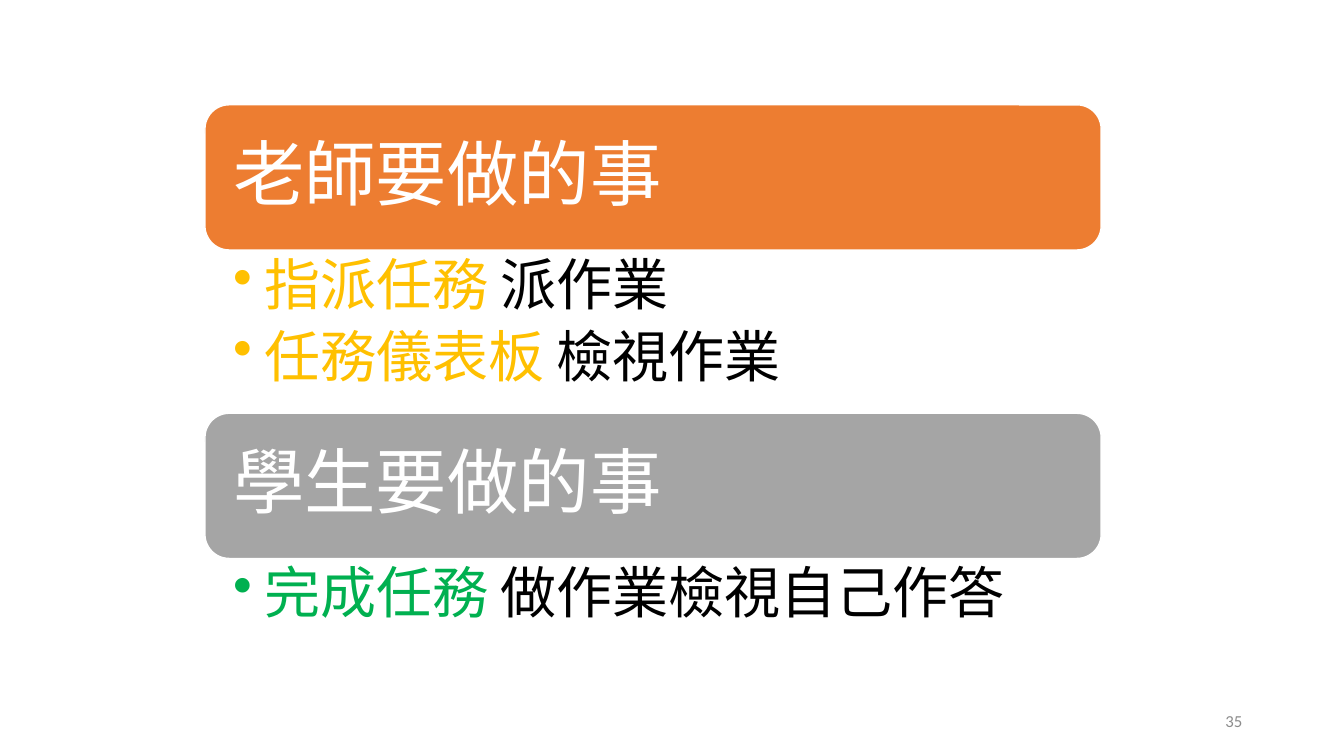
from dataclasses import dataclass

import pptx
import pptx.dml.color
import pptx.enum.shapes
import pptx.enum.text
import pptx.oxml
import pptx.oxml.ns
import pptx.util

WIDTH, HEIGHT = pptx.util.Inches(13.33), pptx.util.Inches(7.5)
FONT = "Calibri"
COLORS = {
    "orange": "ED7D31", "gray": "A5A5A5", "gold": "FFC000", "green": "00B050",
    "white": "FFFFFF", "black": "000000", "number": "8C8C8C",
}
GAP = " "  # one em-wide space between a term and its meaning

# Shares of the slide, in percent
LEFT, SPAN = 15.25, 66.68
STACK_TOP, BANNER_HEIGHT = 13.87, 19.2


@dataclass
class Item:
    term: str
    meaning: str


@dataclass
class Section:
    title: str
    fill: str
    accent: str
    list_height: float
    items: list[Item]


SECTIONS = [
    Section("老師要做的事", "orange", "gold", 21.6,
            [Item("指派任務", "派作業"), Item("任務儀表板", "檢視作業")]),
    Section("學生要做的事", "gray", "green", 12.27,
            [Item("完成任務", "做作業檢視自己作答")]),
]


def area(left: float, top: float, width: float, height: float) -> tuple[int, ...]:
    """Turn percentages of the slide into lengths."""
    return (int(WIDTH * left / 100), int(HEIGHT * top / 100),
            int(WIDTH * width / 100), int(HEIGHT * height / 100))


def color(name: str) -> pptx.dml.color.RGBColor:
    return pptx.dml.color.RGBColor.from_string(COLORS[name])


def set_frame(box, anchor: str, left: float, top: float, right: float) -> None:
    frame = box.text_frame
    frame.word_wrap = True
    frame.vertical_anchor = pptx.enum.text.MSO_ANCHOR[anchor]
    frame.margin_left = pptx.util.Inches(left)
    frame.margin_right = pptx.util.Inches(right)
    frame.margin_top = frame.margin_bottom = pptx.util.Inches(top)


def set_paragraph(para, size: float, align: str = "LEFT") -> None:
    para.font.name = FONT
    para.font.size = pptx.util.Pt(size)
    para.alignment = pptx.enum.text.PP_ALIGN[align]


def add_bullet(para) -> None:
    properties = para._p.get_or_add_pPr()
    indent = pptx.util.Inches(0.31)
    properties.set("marL", str(indent))
    properties.set("indent", str(-indent))
    properties.append(pptx.oxml.parse_xml(
        f'<a:buChar {pptx.oxml.ns.nsdecls("a")} char="•"/>'))


def draw_banner(page, section: Section, top: float) -> None:
    banner = page.shapes.add_shape(
        pptx.enum.shapes.MSO_SHAPE.ROUNDED_RECTANGLE,
        *area(LEFT, top, SPAN, BANNER_HEIGHT))
    banner.shadow.inherit = False
    banner.fill.solid()
    banner.fill.fore_color.rgb = color(section.fill)
    banner.line.color.rgb = color("white")
    banner.line.width = pptx.util.Pt(1)
    set_frame(banner, "MIDDLE", 0.21, 0.21, 0.21)
    para = banner.text_frame.paragraphs[0]
    para.text = section.title
    set_paragraph(para, 51)
    para.font.color.rgb = color("white")
    para.line_spacing = 0.9


def draw_list(page, section: Section, top: float) -> None:
    box = page.shapes.add_textbox(*area(LEFT, top, SPAN, section.list_height))
    set_frame(box, "TOP", 0.28, 0.07, 0.4)
    frame = box.text_frame
    for index, item in enumerate(section.items):
        para = frame.add_paragraph() if index else frame.paragraphs[0]
        set_paragraph(para, 40)
        para.line_spacing = 0.9
        para.space_after = pptx.util.Pt(8)
        add_bullet(para)
        for text, shade in ((item.term + GAP, section.accent), (item.meaning, "black")):
            span = para.add_run()
            span.text = text
            span.font.color.rgb = color(shade)


def draw_page_number(page, number: int) -> None:
    box = page.shapes.add_textbox(*area(70.67, 92.67, 22.5, 5.33))
    set_frame(box, "MIDDLE", 0.1, 0.05, 0.1)
    para = box.text_frame.paragraphs[0]
    para.text = str(number)
    set_paragraph(para, 12, "RIGHT")
    para.font.color.rgb = color("number")


def main() -> None:
    deck = pptx.Presentation()
    deck.slide_width, deck.slide_height = WIDTH, HEIGHT
    page = deck.slides.add_slide(deck.slide_layouts[6])

    # Banners with their lists, stacked without gaps
    top = STACK_TOP
    for section in SECTIONS:
        draw_banner(page, section, top)
        draw_list(page, section, top + BANNER_HEIGHT)
        top += BANNER_HEIGHT + section.list_height

    draw_page_number(page, 35)
    deck.save("out.pptx")


if __name__ == "__main__":
    main()
